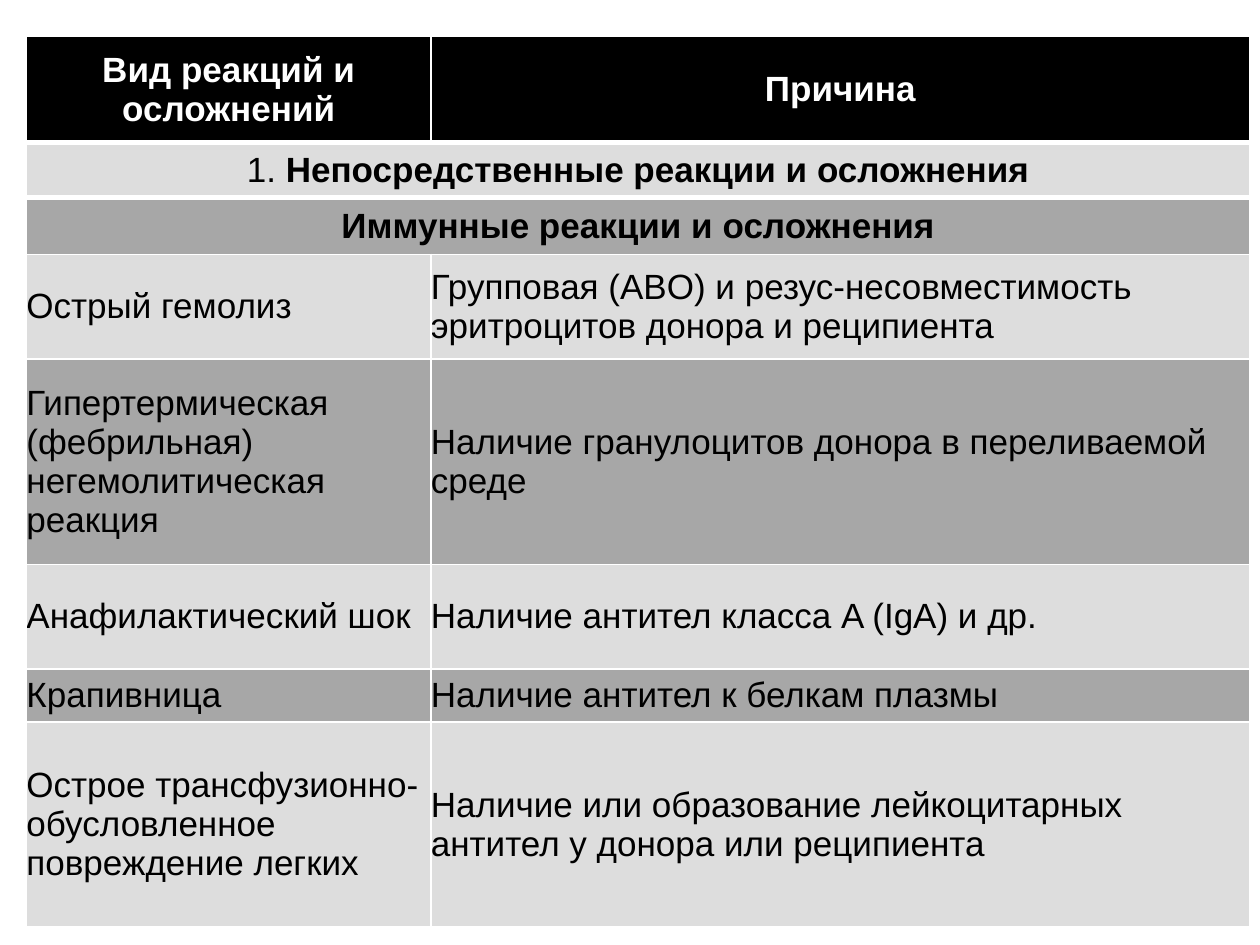
from dataclasses import dataclass

import lxml.etree
import pptx
import pptx.dml.color
import pptx.enum.text
import pptx.oxml.ns
import pptx.table
import pptx.util
from pptx.util import Inches

COLORS = {
    "header": "000000",
    "light": "DDDDDD",
    "dark": "A7A7A7",
    "border": "FFFFFF",
    "header_text": "FFFFFF",
    "text": "000000",
}
COLUMN_WIDTHS = (3.21, 6.5)
THIN, THICK = 1, 3


@dataclass
class Row:
    height: float
    cells: tuple[str, ...]  # a single text spans both columns
    heading: bool = False
    number: str = ""
    top: int = THIN
    bottom: int = THIN


ROWS = [
    Row(0.84, ("Вид реакций и осложнений", "Причина"), heading=True, bottom=THICK),
    Row(0.44, ("Непосредственные реакции и осложнения",), heading=True,
        number="1. ", top=THICK, bottom=THICK),
    Row(0.45, ("Иммунные реакции и осложнения",), heading=True, top=THICK),
    Row(0.83, ("Острый гемолиз",
               "Групповая (ABO) и резус-несовместимость эритроцитов донора и реципиента")),
    Row(1.63, ("Гипертермическая (фебрильная) негемолитическая реакция",
               "Наличие гранулоцитов донора в переливаемой среде")),
    Row(0.83, ("Анафилактический шок", "Наличие антител класса A (IgA) и др.")),
    Row(0.42, ("Крапивница", "Наличие антител к белкам плазмы")),
    Row(1.63, ("Острое трансфузионно-обусловленное повреждение легких",
               "Наличие или образование лейкоцитарных антител у донора или реципиента")),
]


def rgb(name: str) -> pptx.dml.color.RGBColor:
    return pptx.dml.color.RGBColor.from_string(COLORS[name])


def set_borders(cell: pptx.table._Cell, top: int, bottom: int) -> None:
    """Put the border lines first in the cell properties, before the fill."""
    tc_pr = cell._tc.get_or_add_tcPr()
    qn = pptx.oxml.ns.qn
    widths = {"a:lnL": THIN, "a:lnR": THIN, "a:lnT": top, "a:lnB": bottom}
    for index, (tag, width) in enumerate(widths.items()):
        ln = lxml.etree.Element(qn(tag), w=str(pptx.util.Pt(width)))
        fill = lxml.etree.SubElement(ln, qn("a:solidFill"))
        lxml.etree.SubElement(fill, qn("a:srgbClr"), val=COLORS["border"])
        tc_pr.insert(index, ln)


def style_cell(cell: pptx.table._Cell, row: Row, fill: str) -> None:
    cell.margin_left = cell.margin_right = cell.margin_top = cell.margin_bottom = 0
    cell.vertical_anchor = pptx.enum.text.MSO_ANCHOR.MIDDLE
    cell.fill.solid()
    cell.fill.fore_color.rgb = rgb(fill)
    set_borders(cell, row.top, row.bottom)


def write_text(cell: pptx.table._Cell, row: Row, text: str, color: str) -> None:
    p = cell.text_frame.paragraphs[0]
    align = pptx.enum.text.PP_ALIGN
    p.alignment = align.CENTER if row.heading else align.LEFT
    for part, bold in ((row.number, False), (text, row.heading)):
        if part:
            r = p.add_run()
            r.text = part
            r.font.name = "Arial"
            r.font.size = pptx.util.Pt(20)
            r.font.bold = bold
            r.font.color.rgb = rgb(color)


def add_reactions_table(slide: pptx.slide.Slide) -> None:
    table = slide.shapes.add_table(
        len(ROWS), len(COLUMN_WIDTHS), Inches(0.21), Inches(0.29),
        Inches(sum(COLUMN_WIDTHS)), Inches(sum(row.height for row in ROWS)),
    ).table
    for column, width in zip(table.columns, COLUMN_WIDTHS):
        column.width = Inches(width)
    for i, row in enumerate(ROWS):
        table.rows[i].height = Inches(row.height)
        fill = "header" if i == 0 else ("dark", "light")[i % 2]
        for j in range(len(COLUMN_WIDTHS)):
            style_cell(table.cell(i, j), row, fill)
        if len(row.cells) == 1:
            table.cell(i, 0).merge(table.cell(i, len(COLUMN_WIDTHS) - 1))
        for j, text in enumerate(row.cells):
            write_text(table.cell(i, j), row, text, "header_text" if i == 0 else "text")


def main() -> None:
    prs = pptx.Presentation()
    prs.slide_width, prs.slide_height = Inches(10), Inches(7.5)
    slide = prs.slides.add_slide(prs.slide_layouts[6])
    add_reactions_table(slide)
    prs.save("out.pptx")


if __name__ == "__main__":
    main()
